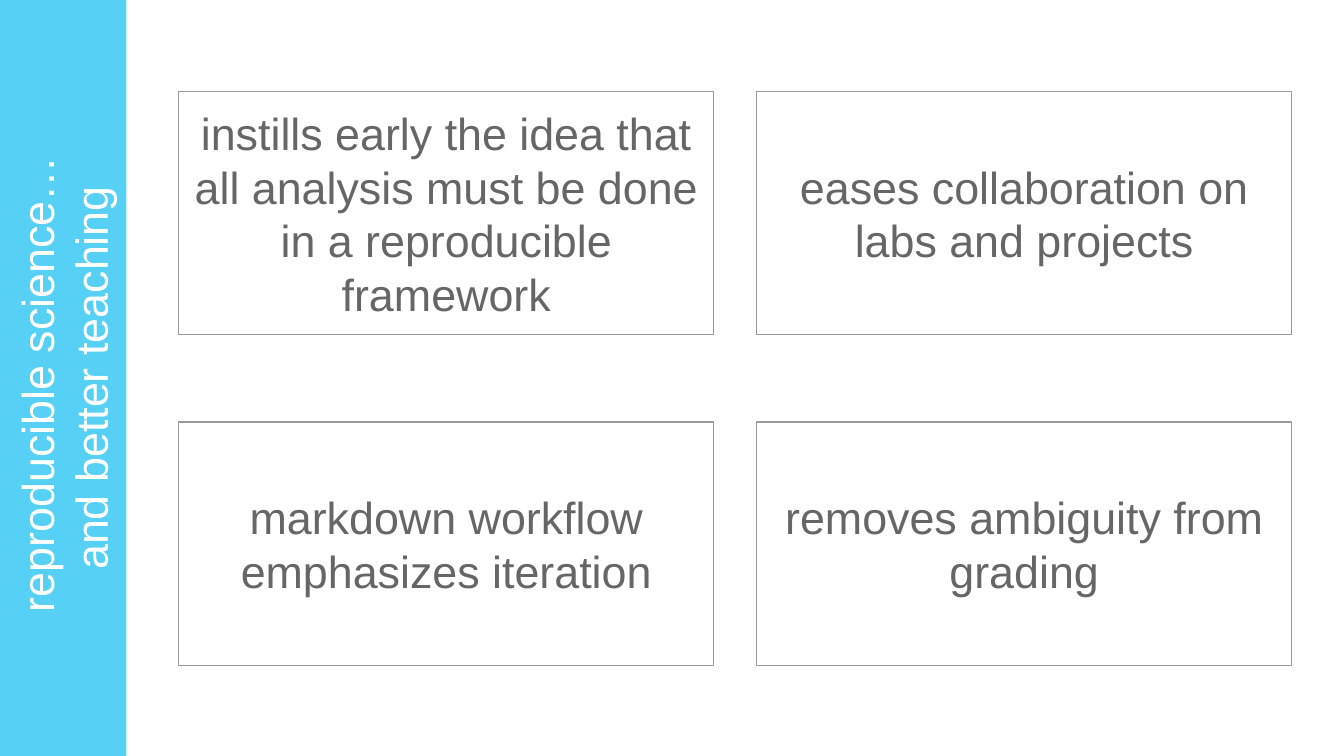
from lxml import etree
from pptx import Presentation
from pptx.dml.color import RGBColor
from pptx.enum import shapes, text
from pptx.oxml import ns
from pptx.util import Inches, Pt

WHITE = RGBColor(0xFF, 0xFF, 0xFF)
SKY = RGBColor(0x16, 0xBE, 0xF1)
BORDER = RGBColor(0x99, 0x99, 0x99)
GREY = RGBColor(0x66, 0x66, 0x66)

WIDTH = 10
HEIGHT = WIDTH * 9 / 16
BANNER = 0.94


def write(shape, lines, color):
    frame = shape.text_frame
    frame.text = "\n".join(lines)
    frame.word_wrap = True
    frame.auto_size = text.MSO_AUTO_SIZE.NONE
    frame.vertical_anchor = text.MSO_ANCHOR.MIDDLE
    frame.margin_left = frame.margin_right = Inches(0.1)
    frame.margin_top = frame.margin_bottom = Inches(0.1)
    for paragraph in frame.paragraphs:
        paragraph.alignment = text.PP_ALIGN.CENTER
        paragraph.font.name = "Arial"
        paragraph.font.size = Pt(24)
        paragraph.font.color.rgb = color


deck = Presentation()
deck.slide_width, deck.slide_height = Inches(WIDTH), Inches(HEIGHT)
page = deck.slides.add_slide(deck.slide_layouts[5])

# Title banner, turned to run up the left edge
title = page.shapes.title
title.left, title.top = Inches((BANNER - HEIGHT) / 2), Inches((HEIGHT - BANNER) / 2)
title.width, title.height = Inches(HEIGHT), Inches(BANNER)
title.rotation = 270
title.fill.solid()
title.fill.fore_color.rgb = SKY
fill_color = title.element.spPr.find(".//" + ns.qn("a:srgbClr"))
etree.SubElement(fill_color, ns.qn("a:alpha"), val="72000")
write(title, ["reproducible science… ", "and better teaching"], WHITE)

# Two-by-two grid of benefits
benefits = [
    "instills early the idea that all analysis must be done in a reproducible framework",
    "eases collaboration on labs and projects",
    "markdown workflow emphasizes iteration",
    "removes ambiguity from grading",
]
for index, benefit in enumerate(benefits):
    row, column = divmod(index, 2)
    box = page.shapes.add_shape(
        shapes.MSO_SHAPE.RECTANGLE,
        Inches(1.33 + 4.3 * column), Inches(0.68 + 2.46 * row),
        Inches(3.98), Inches(1.81))
    box.shadow.inherit = False
    box.fill.background()
    box.line.color.rgb = BORDER
    box.line.width = Pt(0.75)
    write(box, [benefit], GREY)

deck.save("out.pptx")
